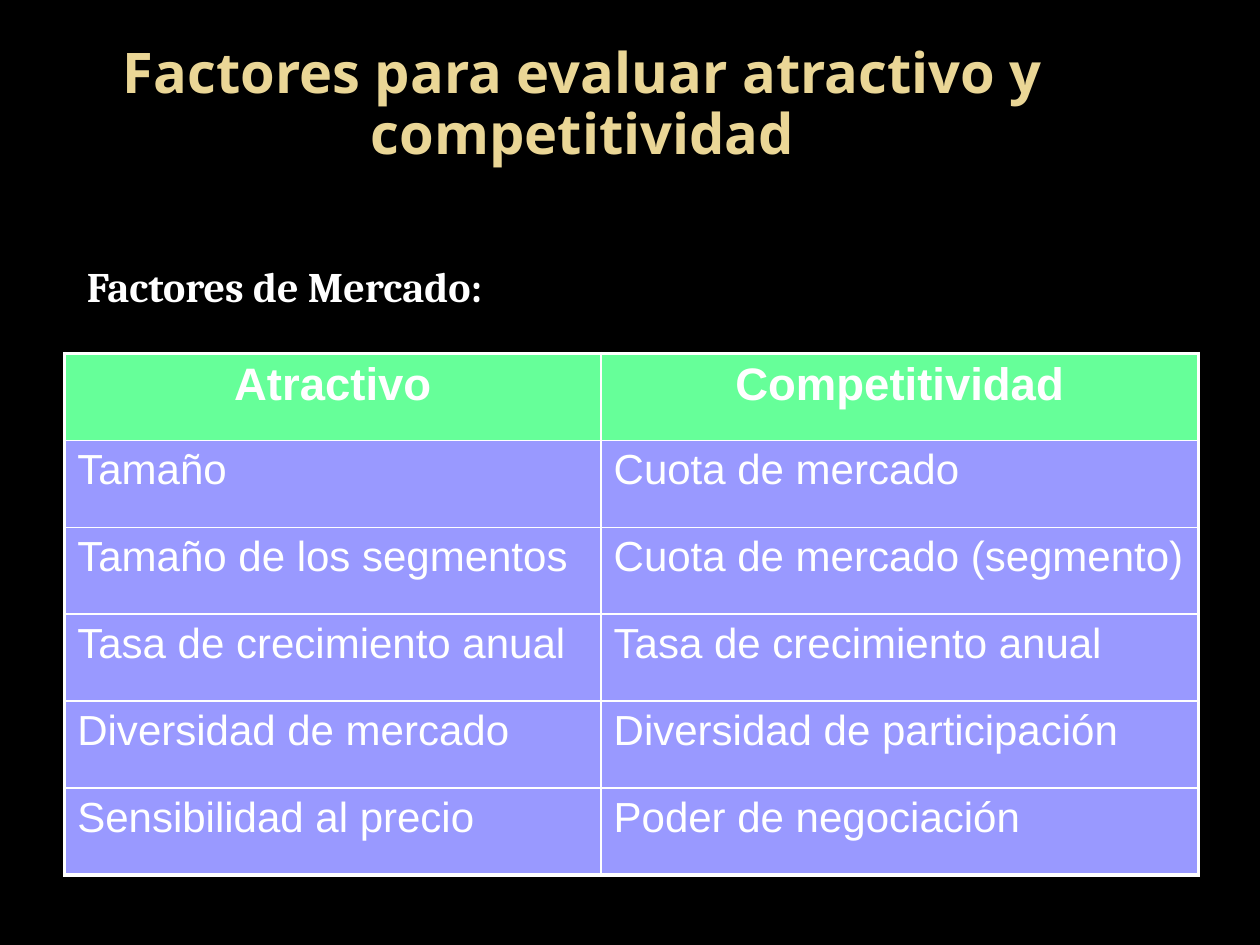
from lxml import etree
from pptx import Presentation
from pptx.dml.color import RGBColor
from pptx.enum.text import MSO_ANCHOR, PP_ALIGN
from pptx.oxml.ns import qn
from pptx.util import Pt

CENTER = PP_ALIGN.CENTER
LEFT = PP_ALIGN.LEFT
MIDDLE = MSO_ANCHOR.MIDDLE
TITLE_ONLY_LAYOUT = 5
THICK, THIN = 2.25, 1
WHITE = "FFFFFF"

FACTORS = [
    ("Atractivo", "Competitividad"),
    ("Tamaño", "Cuota de mercado"),
    ("Tamaño de los segmentos", "Cuota de mercado (segmento)"),
    ("Tasa de crecimiento anual", "Tasa de crecimiento anual"),
    ("Diversidad de mercado", "Diversidad de participación"),
    ("Sensibilidad al precio", "Poder de negociación"),
]


def color(value):
    return RGBColor.from_string(value)


def fill_solid(fill, value):
    fill.solid()
    fill.fore_color.rgb = color(value)


def add_run(paragraph, text, font_name, size, value, bold=False):
    run = paragraph.add_run()
    run.text = text
    run.font.name = font_name
    run.font.size = Pt(size)
    run.font.bold = bold
    run.font.color.rgb = color(value)


def set_borders(cell, widths):
    properties = cell._tc.get_or_add_tcPr()
    for position, (side, width) in enumerate(widths.items()):
        line = etree.Element(qn(f"a:{side}"), w=str(Pt(width)))
        solid = etree.SubElement(line, qn("a:solidFill"))
        etree.SubElement(solid, qn("a:srgbClr"), val=WHITE)
        properties.insert(position, line)


def place_title(slide, left, top, width, height):
    title = slide.shapes.title
    title.left, title.top = Pt(left), Pt(top)
    title.width, title.height = Pt(width), Pt(height)
    frame = title.text_frame
    frame.word_wrap = True
    frame.vertical_anchor = MIDDLE
    paragraph = frame.paragraphs[0]
    paragraph.alignment = CENTER
    paragraph.line_spacing = 0.9
    add_run(paragraph, "Factores para evaluar atractivo y competitividad",
            "Noto Sans", 32, "EAD696", bold=True)


def place_subtitle(slide, left, top, width, height):
    box = slide.shapes.add_textbox(Pt(left), Pt(top), Pt(width), Pt(height))
    box.text_frame.word_wrap = True
    add_run(box.text_frame.paragraphs[0], "Factores de Mercado:",
            "Cambria", 24, WHITE, bold=True)


def place_factor_table(slide, left, top, width, height):
    row_count, column_count = len(FACTORS), len(FACTORS[0])
    table = slide.shapes.add_table(row_count, column_count, Pt(left), Pt(top),
                                   Pt(width), Pt(height)).table
    first_width = 306.5
    table.columns[0].width = Pt(first_width)
    table.columns[1].width = Pt(width - first_width)
    for row, labels in enumerate(FACTORS):
        table.rows[row].height = Pt(height / row_count)
        header = row == 0
        for column, label in enumerate(labels):
            cell = table.cell(row, column)
            fill_solid(cell.fill, "66FF99" if header else "9999FF")
            set_borders(cell, {
                "lnL": THICK if column == 0 else THIN,
                "lnR": THICK if column == column_count - 1 else THIN,
                "lnT": THICK if header else THIN,
                "lnB": THICK if row == row_count - 1 else THIN,
            })
            paragraph = cell.text_frame.paragraphs[0]
            paragraph.alignment = CENTER if header else LEFT
            add_run(paragraph, label, "Arial", 26 if header else 24, WHITE, bold=header)


def main():
    presentation = Presentation()
    presentation.slide_width, presentation.slide_height = Pt(720), Pt(540)
    slide = presentation.slides.add_slide(presentation.slide_layouts[TITLE_ONLY_LAYOUT])
    fill_solid(slide.background.fill, "000000")
    place_title(slide, 36, 9.5, 594, 102)
    place_factor_table(slide, 37, 202, 648, 298)
    place_subtitle(slide, 42.5, 145.5, 283.5, 36)
    presentation.save("out.pptx")


if __name__ == "__main__":
    main()
